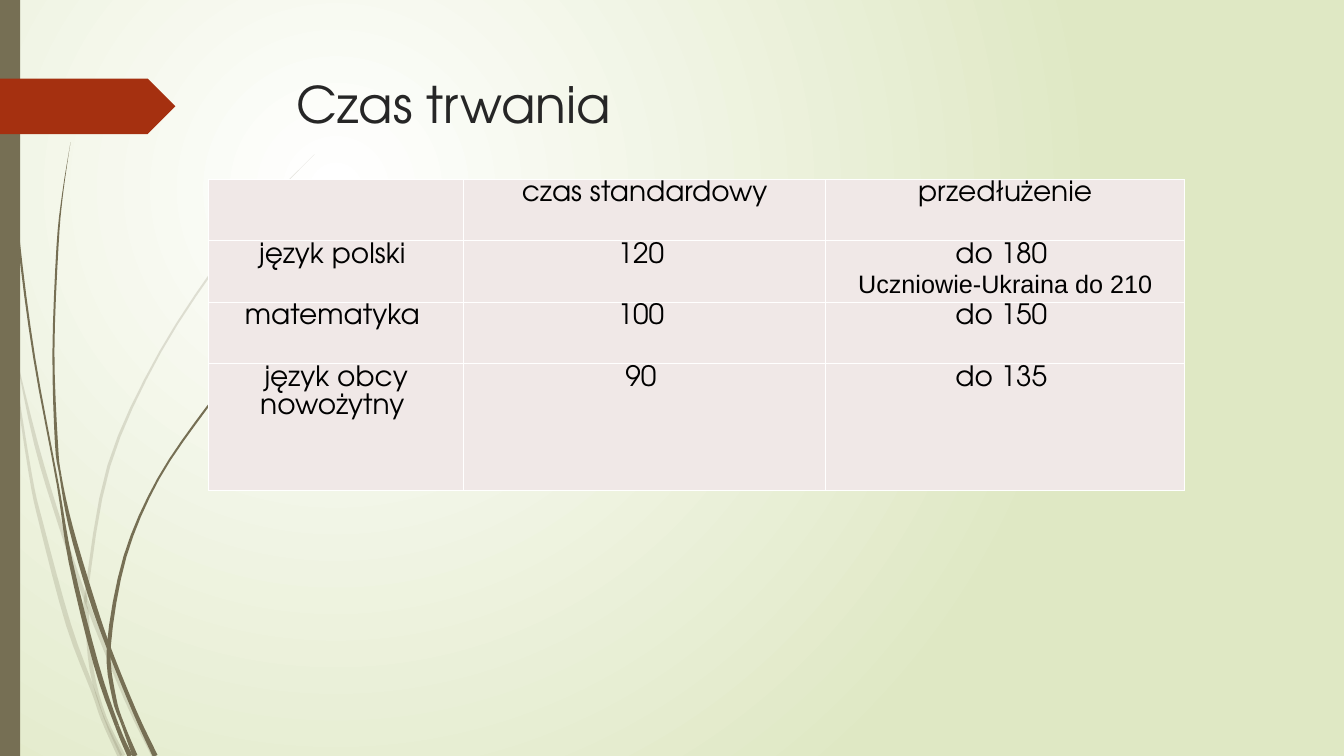
import math
from lxml import etree
from pptx import Presentation, util as u
from pptx.dml.color import RGBColor
from pptx.enum import shapes, text
from pptx.oxml import ns, parse_xml

WIDTH, HEIGHT = 13.33, 7.5
FONT = "TeX Gyre Adventor"
OLIVE, RED, INK, BLACK, WHITE = "766F54", "A53010", "262626", "000000", "FFFFFF"
CELL, MEADOW = "F0E8E7", "DFE8C4"
STEPS = 4

# Each blade has its joints, then (x, y, thickness) along its middle.
PALE_BLADES = [
    ([1, 6], [(0, 2.9, .04), (.11, 3.5, .02), (.3, 4.7, .03), (.41, 5.2, .04), (.68, 6.2, .05),
              (.93, 6.87, .04), (1.02, 7.13, .04), (1.19, 7.5, .05)]),
    ([3], [(.14, 3.45, 0), (.36, 4.41, .04), (.6, 5.21, .04), (.86, 5.97, .04),
           (1.25, 6.93, .04), (1.53, 7.5, .05)]),
    ([5, 6, 8], [(3.12, 1.53, 0), (2.68, 1.98, .01), (2.28, 2.45, .02), (1.59, 3.49, .02),
                 (1.08, 4.62, .03), (.86, 5.86, .03), (.86, 6.08, .04), (.91, 6.65, .04),
                 (1.04, 7.11, .03), (1.22, 7.5, .05)]),
]
DARK_BLADES = [
    ([4, 7], [(.04, 0, .01), (.08, 1.1, .01), (.18, 2.33, .02), (.34, 3.55, .02), (.57, 4.79, .02),
              (.7, 5.57, .04), (.95, 6.58, .05), (1.16, 7.2, .04), (1.29, 7.5, .05)]),
    ([5, 8], [(.7, 1.41, 0), (.62, 1.93, .01), (.57, 2.45, .02), (.53, 3.49, .02), (.56, 4.4, .03),
              (.6, 4.72, .02), (.7, 5.22, .04), (.9, 5.91, .05), (1.08, 6.43, .04),
              (1.34, 7.07, .04), (1.54, 7.5, .05)]),
    ([5, 7], [(2.6, 3.44, 0), (2.31, 3.74, .01), (2.04, 4.06, .02), (1.57, 4.75, .02),
              (1.24, 5.52, .03), (1.08, 6.4, .04), (1.13, 6.91, .04), (1.22, 7.19, .03),
              (1.34, 7.5, .05)]),
]
COLUMNS = [2.53, 3.59, 3.56]
ROWS = [.61, .61, .61, 1.26]
TIMES = [
    ["", "czas standardowy", "przedłużenie"],
    ["język polski ", "120 ", "do 180 \nUczniowie-Ukraina do 210"],
    ["matematyka ", "100 ", "do 150 "],
    ["język obcy nowożytny ", "90 ", "do 135 "],
]


def color(value):
    """Turn a hex string into a colour."""
    return RGBColor.from_string(value)


def apply(obj, values):
    """Set attributes from a dict of format values."""
    for name, value in values.items():
        setattr(obj, name, value)


def paint(sp, fill, alpha=None):
    """Give a shape a plain fill with no line or shadow."""
    sp.shadow.inherit = False
    sp.fill.solid()
    sp.fill.fore_color.rgb = color(fill)
    sp.line.fill.background()
    if alpha:
        tint = sp._element.spPr.find(".//" + ns.qn("a:srgbClr"))
        etree.SubElement(tint, ns.qn("a:alpha"), val=str(alpha * 1000))


def add_preset(s, kind, x, y, w, h, fill):
    """Add a plain preset shape."""
    sp = s.shapes.add_shape(kind, *map(u.Inches, (x, y, w, h)))
    paint(sp, fill)


def smooth_run(points):
    """Sample a smooth curve through the points."""
    padded = [points[0], *points, points[-1]]
    run = []
    for a, b, c, d in zip(padded, padded[1:], padded[2:], padded[3:]):
        for t in (i / STEPS for i in range(STEPS)):
            run.append([(2 * q + (r - p) * t + (2 * p - 5 * q + 4 * r - v) * t ** 2
                         + (3 * q - p - 3 * r + v) * t ** 3) / 2
                        for p, q, r, v in zip(a, b, c, d)])
    return run + [list(points[-1])]


def add_blade(s, joints, points, alpha=None):
    """Add a blade of grass, one outline for each piece between joints."""
    run = smooth_run(points)
    left, right = [], []
    for i, (x, y, thick) in enumerate(run):
        before, after = run[max(i - 1, 0)], run[min(i + 1, len(run) - 1)]
        dx, dy = after[0] - before[0], after[1] - before[1]
        k = thick / 2 / math.hypot(dx, dy)
        left.append((u.Inches(x - dy * k), u.Inches(y + dx * k)))
        right.append((u.Inches(x + dy * k), u.Inches(y - dx * k)))
    ends = [0, *joints, len(points) - 1]
    for first, last in zip(ends, ends[1:]):
        piece = slice(first * STEPS, last * STEPS + 1)
        outline = left[piece] + right[piece][::-1]
        builder = s.shapes.build_freeform(*outline[0])
        builder.add_line_segments(outline[1:], close=True)
        paint(builder.convert_to_shape(), OLIVE, alpha)


def set_background(s):
    """Fill the background with a round gradient centred in the upper left."""
    fill = s.background.fill
    fill.gradient()
    for stop, value in zip(fill.gradient_stops, (WHITE, MEADOW)):
        stop.color.rgb = color(value)
    lin = s._element.find(".//" + ns.qn("a:lin"))
    lin.getparent().replace(lin, parse_xml(
        f'<a:path {ns.nsdecls("a")} path="circle">'
        '<a:fillToRect l="50000" t="50000" r="100000" b="100000"/></a:path>'))


def write(p, words, size, ink, face=FONT):
    """Write one run into a paragraph."""
    r = p.add_run()
    r.text = words
    apply(r.font, {"size": u.Pt(size), "name": face})
    r.font.color.rgb = color(ink)


def add_title(s, words):
    """Add the slide title."""
    tf = s.shapes.add_textbox(*map(u.Inches, (2.84, .68, 9.75, 1.4))).text_frame
    apply(tf, {"word_wrap": True, "vertical_anchor": text.MSO_ANCHOR.TOP})
    write(tf.paragraphs[0], words, 36, INK)


def add_borders(cell):
    """Draw thin white borders on all sides of a cell."""
    tc_pr = cell._tc.get_or_add_tcPr()
    for i, side in enumerate(("lnL", "lnR", "lnT", "lnB")):
        tc_pr.insert(i, parse_xml(
            f'<a:{side} {ns.nsdecls("a")} w="12700"><a:solidFill>'
            f'<a:srgbClr val="{WHITE}"/></a:solidFill></a:{side}>'))


def fill_cell(cell, words):
    """Fill, frame and write one cell; a second line is a smaller, tightly fitted note."""
    lines = words.splitlines()
    apply(cell, {"margin_left": u.Inches(.07), "margin_right": u.Inches(.07),
                 "margin_top": 0, "margin_bottom": u.Inches(-.08 if lines[1:] else 0)})
    cell.fill.solid()
    cell.fill.fore_color.rgb = color(CELL)
    add_borders(cell)
    tf = cell.text_frame
    styles = [(20, BLACK, FONT), (18, BLACK, "Arial")]
    for i, (line, style) in enumerate(zip(lines, styles)):
        p = tf.add_paragraph() if i else tf.paragraphs[0]
        apply(p, {"alignment": text.PP_ALIGN.CENTER, "line_spacing": 1.07})
        write(p, line, *style)


def add_times(s):
    """Add the table of exam times."""
    size = 2.07, 1.78, sum(COLUMNS), sum(ROWS)
    table = s.shapes.add_table(len(ROWS), len(COLUMNS), *map(u.Inches, size)).table
    apply(table, {"first_row": False, "horz_banding": False})
    for column, width in zip(table.columns, COLUMNS):
        column.width = u.Inches(width)
    for row, height, line in zip(table.rows, ROWS, TIMES):
        row.height = u.Inches(height)
        for cell, words in zip(row.cells, line):
            fill_cell(cell, words)


def main():
    """Build the slide and save it."""
    prs = Presentation()
    apply(prs, {"slide_width": u.Inches(WIDTH), "slide_height": u.Inches(HEIGHT)})
    s = prs.slides.add_slide(prs.slide_layouts[6])
    set_background(s)
    for joints, points in PALE_BLADES:
        add_blade(s, joints, points, alpha=20)
    for joints, points in DARK_BLADES:
        add_blade(s, joints, points)
    add_preset(s, shapes.MSO_SHAPE.RECTANGLE, 0, 0, .2, HEIGHT, OLIVE)
    add_preset(s, shapes.MSO_SHAPE.PENTAGON, 0, .78, 1.74, .55, RED)
    add_title(s, "Czas trwania")
    add_times(s)
    prs.save("out.pptx")


if __name__ == "__main__":
    main()
